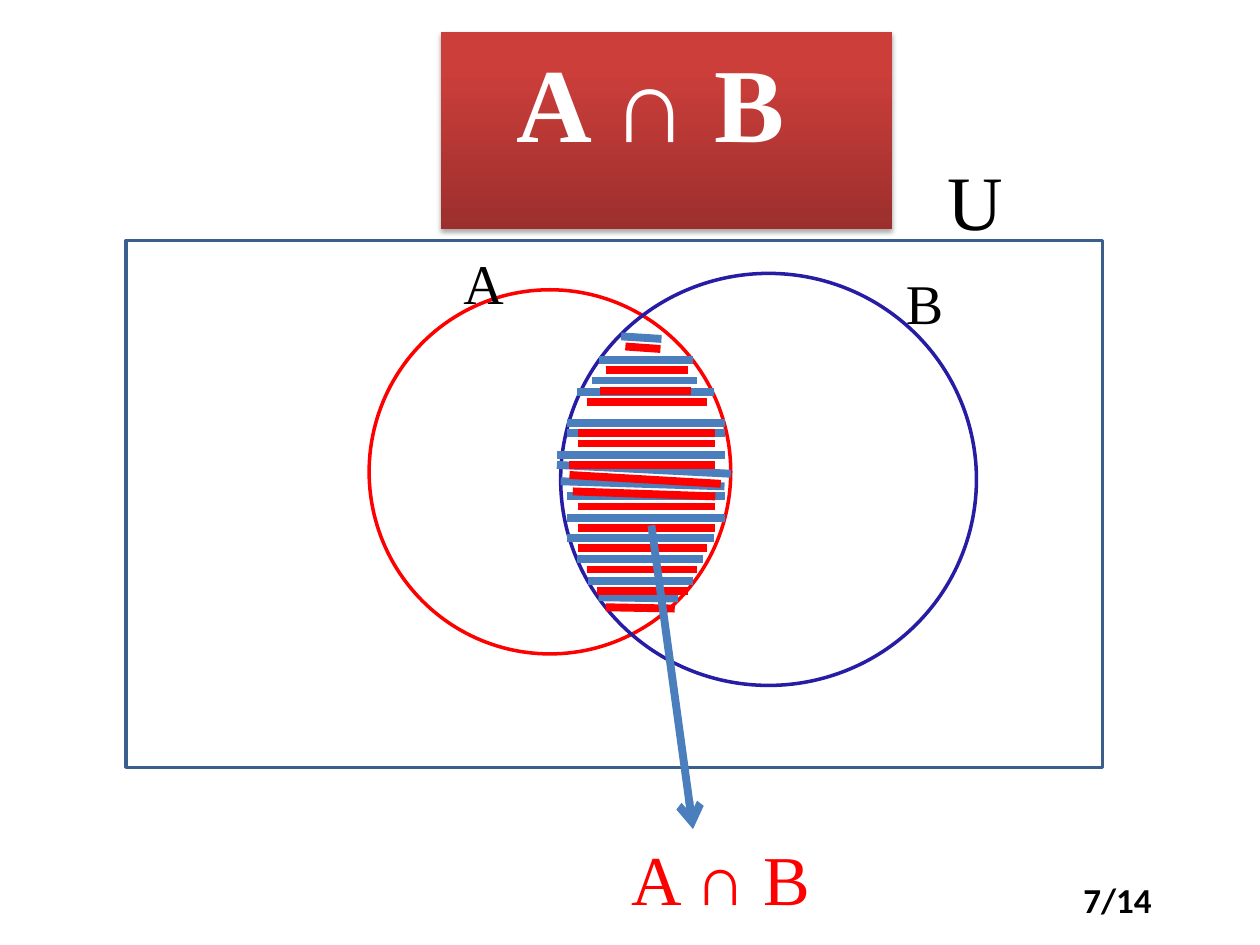
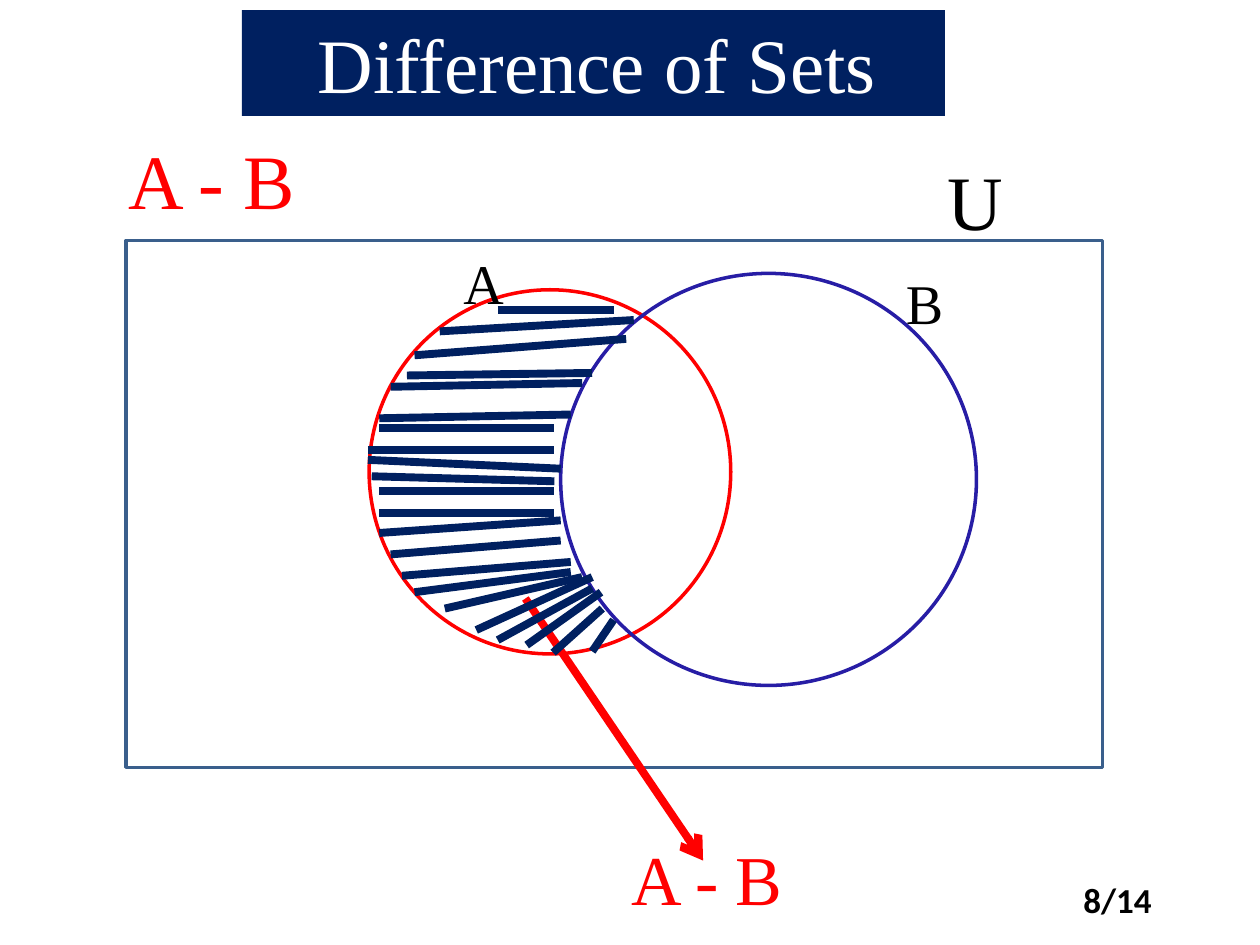
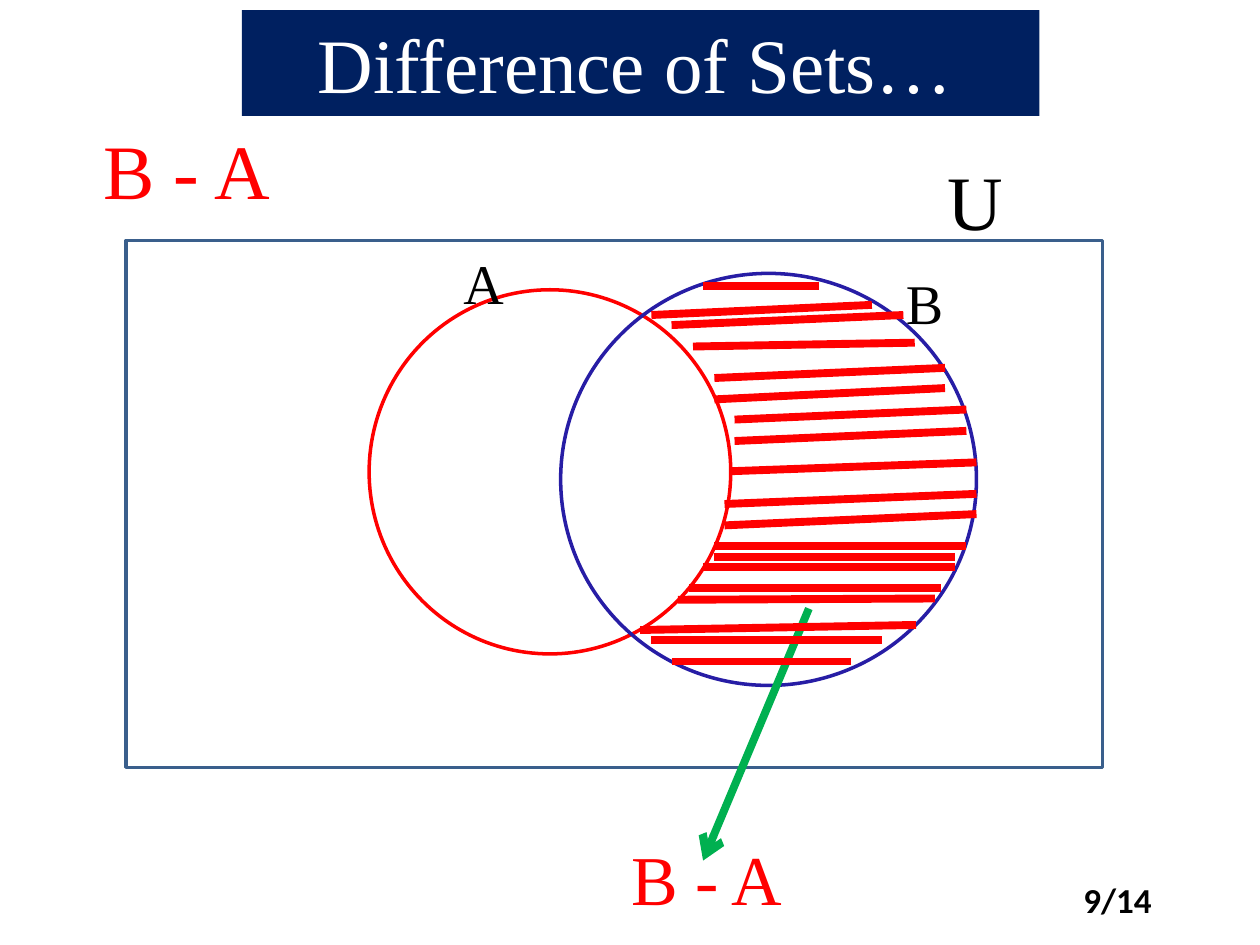
from dataclasses import dataclass

from lxml import etree
from pptx import Presentation
from pptx.dml.color import RGBColor
from pptx.enum.shapes import MSO_CONNECTOR, MSO_SHAPE
from pptx.enum.text import MSO_ANCHOR, MSO_AUTO_SIZE, PP_ALIGN
from pptx.oxml.ns import qn
from pptx.util import Cm, Pt

RECTANGLE = MSO_SHAPE.RECTANGLE
OVAL = MSO_SHAPE.OVAL
STRAIGHT = MSO_CONNECTOR.STRAIGHT
LEFT = PP_ALIGN.LEFT
TOP = MSO_ANCHOR.TOP
GROW = MSO_AUTO_SIZE.SHAPE_TO_FIT_TEXT
TITLE_ONLY = 5
SLIDE_TOTAL = 14


@dataclass(frozen=True)
class Theme:
    serif: str = "Times New Roman"
    sans: str = "Calibri"
    black: str = "000000"
    white: str = "FFFFFF"
    red: str = "FF0000"
    navy: str = "002060"
    steel: str = "4B7EBC"
    green: str = "00B050"
    frame: str = "3A5F8C"
    set_b: str = "271DA5"
    banner_dark: str = "9C2F2D"
    banner_light: str = "CB3E3A"
    banner_size: int = 60
    heading_size: int = 44
    result_size: int = 40
    set_size: int = 32
    number_size: int = 20
    outline: float = 2
    stroke: float = 4.5


def inches(value):
    return Cm(value * 2.54)


def rgb(value):
    return RGBColor.from_string(value)


def write(frame, text, *, size, color, font, bold=False, indent=0):
    frame.word_wrap = True
    frame.auto_size = GROW
    frame.vertical_anchor = TOP
    paragraph = frame.paragraphs[0]
    paragraph.alignment = LEFT
    paragraph._p.get_or_add_pPr().set("marL", str(inches(indent)))
    run = paragraph.add_run()
    run.text = text
    run.font.name = font
    run.font.size = Pt(size)
    run.font.bold = bold
    run.font.color.rgb = rgb(color)


class Deck:
    def __init__(self, theme):
        self.theme = theme
        self.presentation = Presentation()
        self.presentation.slide_width = inches(10)
        self.presentation.slide_height = inches(7.5)
        self.slide = None

    def start(self, number):
        layout = self.presentation.slide_layouts[TITLE_ONLY]
        self.slide = self.presentation.slides.add_slide(layout)
        self.text(f"{number}/{SLIDE_TOTAL}", (8.5, 6.92, 1.08, 0.44),
                  size=self.theme.number_size, font=self.theme.sans, bold=True)

    def title(self, text, box, *, size, bold=False):
        title = self.slide.shapes.title
        title.left, title.top, title.width, title.height = map(inches, box)
        title.line.fill.background()
        write(title.text_frame, text, size=size, color=self.theme.white,
              font=self.theme.serif, bold=bold, indent=0.5)
        return title

    def banner(self, text):
        banner = self.title(text, (3.5, 0.25, 3.58, 1.11),
                            size=self.theme.banner_size, bold=True)
        banner.fill.gradient()
        banner.fill.gradient_angle = 90
        shades = ((0, self.theme.banner_dark), (0.8, self.theme.banner_light))
        for stop, (position, shade) in zip(banner.fill.gradient_stops, shades):
            stop.position = position
            stop.color.rgb = rgb(shade)
        effects = etree.SubElement(banner._element.spPr, qn("a:effectLst"))
        shadow = etree.SubElement(effects, qn("a:outerShdw"), blurRad=str(Pt(3.1)),
                                  dist=str(Pt(1.8)), dir="5400000", rotWithShape="0")
        shade = etree.SubElement(shadow, qn("a:srgbClr"), val=self.theme.black)
        etree.SubElement(shade, qn("a:alpha"), val="35000")

    def heading(self, text, width):
        heading = self.title(text, (1.92, 0.08, width, 0.84), size=self.theme.heading_size)
        heading.fill.solid()
        heading.fill.fore_color.rgb = rgb(self.theme.navy)

    def text(self, text, box, *, size, color=None, font=None, bold=False, indent=0):
        label = self.slide.shapes.add_textbox(*map(inches, box))
        write(label.text_frame, text, size=size, color=color or self.theme.black,
              font=font or self.theme.serif, bold=bold, indent=indent)

    def outline(self, kind, box, color):
        shape = self.slide.shapes.add_shape(kind, *map(inches, box))
        shape.shadow.inherit = False
        shape.fill.background()
        shape.line.color.rgb = rgb(color)
        shape.line.width = Pt(self.theme.outline)

    def line(self, ends, color, shapes=None):
        shapes = shapes or self.slide.shapes
        line = shapes.add_connector(STRAIGHT, *map(inches, ends))
        line.line.color.rgb = rgb(color)
        line.line.width = Pt(self.theme.stroke)
        etree.SubElement(line._element.spPr, qn("a:effectLst"))
        return line

    def arrow(self, ends, color):
        stroke = self.line(ends, color)._element.spPr.find(qn("a:ln"))
        etree.SubElement(stroke, qn("a:tailEnd"), type="arrow")

    def hatch(self, strokes, color):
        group = self.slide.shapes.add_group_shape()
        for ends in strokes:
            self.line(ends, color, group.shapes)

    def venn(self, result):
        theme = self.theme
        self.outline(RECTANGLE, (1, 1.91, 7.75, 4.18), theme.frame)
        self.text("U", (7.42, 1.17, 0.32, 0.84), size=theme.heading_size)
        self.outline(OVAL, (2.93, 2.3, 2.87, 2.89), theme.red)
        self.outline(OVAL, (4.45, 2.17, 3.3, 3.27), theme.set_b)
        self.text("A", (3.58, 1.92, 0.32, 0.64), size=theme.set_size)
        self.text("B", (7.09, 2.08, 0.32, 0.64), size=theme.set_size)
        self.text(result, (4.41, 6.58, 2.68, 0.77), size=theme.result_size,
                  color=theme.red, indent=0.5)

    def difference(self, number, heading, width, result, corner, pointer,
                   pointer_color, strokes, stroke_color):
        self.start(number)
        self.heading(heading, width)
        self.text(result, (*corner, 2.68, 0.84), size=self.theme.heading_size,
                  color=self.theme.red, indent=0.5)
        self.venn(result)
        self.arrow(pointer, pointer_color)
        self.hatch(strokes, stroke_color)


INTERSECTION = (
    (4.45, 3.82, 5.75, 3.86), (4.42, 3.61, 5.75, 3.61), (4.5, 3.36, 5.75, 3.36),
    (4.58, 3.11, 5.67, 3.11), (4.75, 2.86, 5.5, 2.86), (4.5, 4.11, 5.75, 4.11),
    (4.67, 4.61, 5.5, 4.61), (4.75, 4.74, 5.38, 4.75), (4.5, 3.44, 5.75, 3.44),
    (4.5, 3.94, 5.75, 3.94), (4.5, 4.27, 5.67, 4.27), (4.58, 4.44, 5.58, 4.44),
    (4.7, 3.02, 5.53, 3.02), (4.93, 2.67, 5.25, 2.69), (4.42, 3.69, 5.8, 3.76),
)
ONLY_A = (
    (2.95, 3.78, 4.4, 3.82), (2.92, 3.57, 4.4, 3.57), (3.01, 3.32, 4.53, 3.29),
    (3.1, 3.07, 4.62, 3.04), (3.29, 2.82, 4.97, 2.69), (3.01, 4.07, 4.4, 4.07),
    (3.19, 4.57, 4.53, 4.46), (3.29, 4.7, 4.53, 4.54), (3.01, 3.4, 4.4, 3.4),
    (3.01, 3.9, 4.4, 3.9), (3.01, 4.23, 4.45, 4.13), (3.1, 4.4, 4.45, 4.29),
    (3.23, 2.98, 4.7, 2.96), (3.49, 2.63, 5.03, 2.54), (2.92, 3.65, 4.45, 3.72),
    (3.95, 2.46, 4.87, 2.46), (3.53, 4.83, 4.62, 4.58), (3.95, 5.08, 4.7, 4.67),
    (4.39, 5.18, 4.78, 4.83), (3.78, 5, 4.7, 4.58), (4.18, 5.12, 4.77, 4.7),
    (4.7, 5.17, 4.87, 4.92),
)
ONLY_B = (
    (5.17, 2.5, 6.92, 2.42), (5.5, 2.75, 7.26, 2.72), (5.67, 3, 7.5, 2.92),
    (5.83, 3.33, 7.67, 3.25), (5.8, 3.74, 7.75, 3.67), (5.75, 4.17, 7.75, 4.08),
    (5.58, 4.5, 7.58, 4.5), (5.38, 4.76, 7.42, 4.75), (5.08, 5, 7.27, 4.96),
    (5.33, 5.25, 6.75, 5.25), (5.58, 2.27, 6.5, 2.27), (5.83, 3.5, 7.67, 3.42),
    (5.67, 3.17, 7.5, 3.08), (5.75, 4, 7.75, 3.92), (5.67, 4.42, 7.58, 4.42),
    (5.47, 4.67, 7.47, 4.67), (5.67, 4.33, 7.67, 4.33), (5.33, 2.58, 7.17, 2.5),
    (5.17, 5.08, 7, 5.08),
)


def narrowed(strokes, left=4.42, inset=0.1, scale=0.87, drop=0.08):
    def shift(x):
        return left + inset + (x - left) * scale

    return [(shift(x1), y1 + drop, shift(x2), y2 + drop) for x1, y1, x2, y2 in strokes]


def main():
    theme = Theme()
    deck = Deck(theme)

    deck.start(7)
    deck.banner("A ∩ B")
    deck.venn("A ∩ B")
    deck.hatch(INTERSECTION, theme.steel)
    deck.hatch(narrowed(INTERSECTION), theme.red)
    deck.arrow((5.17, 4.17, 5.5, 6.58), theme.steel)

    deck.difference(8, "Difference of Sets", 5.58, "A - B", (0.42, 1),
                    (4.17, 4.75, 5.58, 6.83), theme.red, ONLY_A, theme.navy)
    deck.difference(9, "Difference of Sets…", 6.33, "B - A", (0.22, 0.92),
                    (6.42, 4.83, 5.58, 6.83), theme.green, ONLY_B, theme.red)

    deck.presentation.save("out.pptx")


if __name__ == "__main__":
    main()
